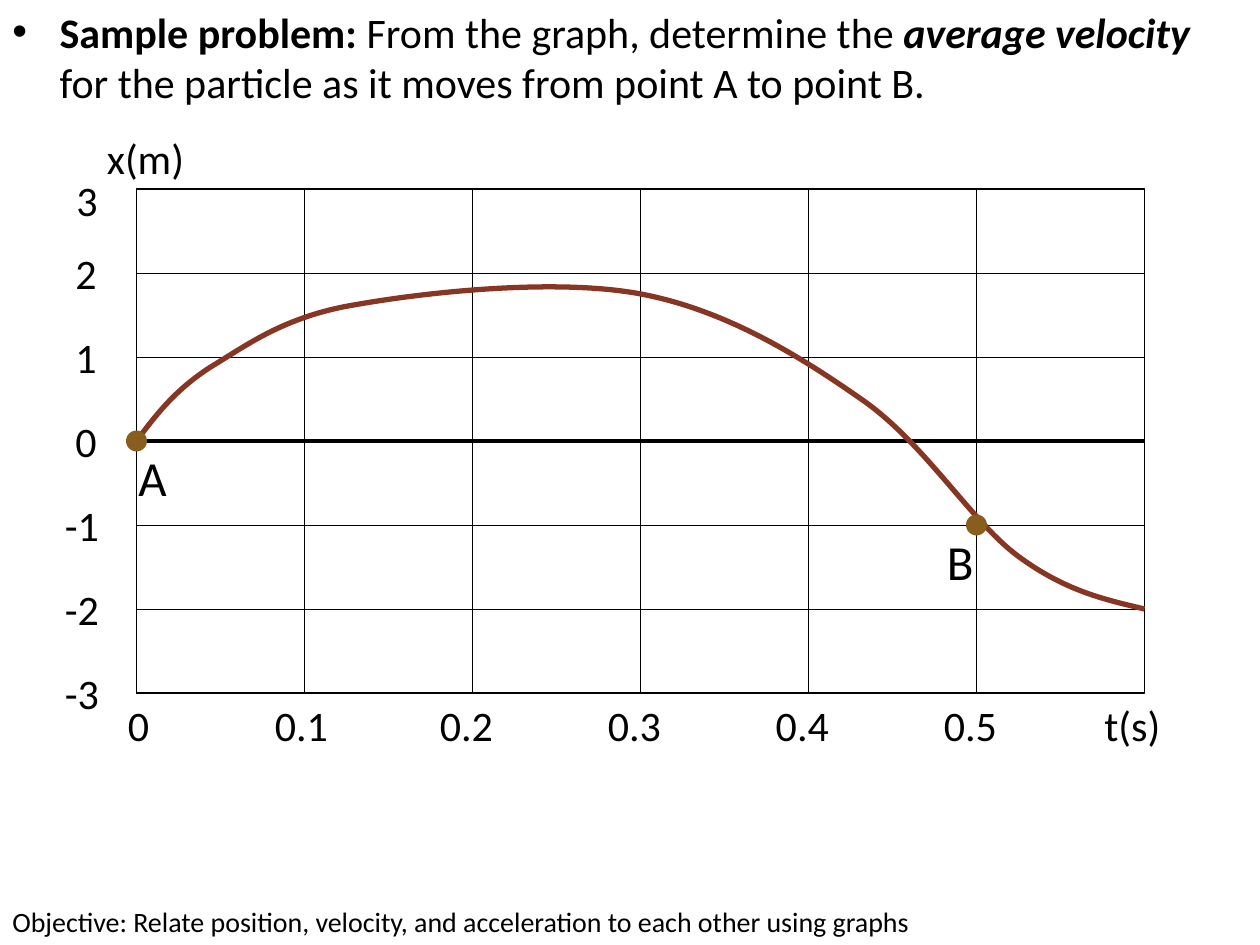
from dataclasses import dataclass
from lxml.etree import SubElement
from pptx import Presentation
from pptx.dml.color import RGBColor
from pptx.enum.shapes import MSO_CONNECTOR, MSO_SHAPE
from pptx.enum.text import MSO_ANCHOR, MSO_AUTO_SIZE
from pptx.oxml.ns import qn
from pptx.util import Pt

EMU_PER_PX = 7620
SLIDE_WIDTH, SLIDE_HEIGHT = 1200, 900
LEFT, TOP, STEP_X, STEP_Y, COLUMNS, ROWS = 130, 180, 160, 80, 6, 6
RIGHT, BOTTOM = LEFT + COLUMNS * STEP_X, TOP + ROWS * STEP_Y
AXIS_Y = TOP + 3 * STEP_Y


@dataclass(frozen=True)
class Theme:
    font: str = "Calibri"
    ink: str = "000000"
    paper: str = "FFFFFF"
    curve: str = "873624"
    point: str = "895D1D"
    body: int = 24
    name: int = 28
    footer: int = 16
    hairline: float = 0.5
    thin: float = 0.75
    axis: float = 2.25
    bold_curve: float = 3


def px(value):
    return round(value * EMU_PER_PX)


class SlidePainter:
    def __init__(self, slide, theme):
        self.slide = slide
        self.theme = theme

    def paint_line(self, line, color, width):
        line.color.rgb = RGBColor.from_string(color)
        line.width = Pt(width)

    def text(self, left, top, width, height, runs, size, wrap=True,
             anchor=MSO_ANCHOR.TOP, grow=True):
        box = self.slide.shapes.add_textbox(*map(px, (left, top, width, height)))
        frame = box.text_frame
        frame.word_wrap = wrap
        frame.vertical_anchor = anchor
        frame.auto_size = MSO_AUTO_SIZE.SHAPE_TO_FIT_TEXT if grow else MSO_AUTO_SIZE.NONE
        para = frame.paragraphs[0]
        for words, bold, italic in runs:
            span = para.add_run()
            span.text = words
            span.font.name = self.theme.font
            span.font.size = Pt(size)
            span.font.bold = bold
            span.font.italic = italic
            span.font.color.rgb = RGBColor.from_string(self.theme.ink)
        return para

    def bullet(self, left, top, width, height, runs, size, indent):
        para = self.text(left, top, width, height, runs, size, grow=False)
        properties = para._p.get_or_add_pPr()
        properties.set("marL", str(px(indent)))
        properties.set("indent", str(-px(indent)))
        SubElement(properties, qn("a:buFont")).set("typeface", "Arial")
        SubElement(properties, qn("a:buChar")).set("char", "•")

    def label(self, left, top, width, height, words, size):
        self.text(left, top, width, height, [(words, False, False)], size,
                  wrap=False, anchor=MSO_ANCHOR.BOTTOM)

    def shape(self, kind, left, top, width, height, fill, outline=None):
        shape = self.slide.shapes.add_shape(kind, *map(px, (left, top, width, height)))
        shape.shadow.inherit = False
        shape.fill.solid()
        shape.fill.fore_color.rgb = RGBColor.from_string(fill)
        if outline:
            self.paint_line(shape.line, outline, self.theme.thin)
        else:
            shape.line.fill.background()
        return shape

    def line(self, x1, y1, x2, y2, width):
        line = self.slide.shapes.add_connector(
            MSO_CONNECTOR.STRAIGHT, *map(px, (x1, y1, x2, y2)))
        self.paint_line(line.line, self.theme.ink, width)
        SubElement(line._element.spPr, qn("a:effectLst"))
        return line

    def curve(self, start, points, color, width):
        builder = self.slide.shapes.build_freeform(*start, scale=EMU_PER_PX)
        builder.add_line_segments(points, close=False)
        shape = builder.convert_to_shape()
        segments = list(shape._element.iter(qn("a:lnTo")))
        for first in range(0, len(segments), 3):
            bend, *others = segments[first:first + 3]
            for other in others:
                bend.append(other[0])
                other.getparent().remove(other)
            bend.tag = qn("a:cubicBezTo")
        shape.shadow.inherit = False
        shape.fill.background()
        self.paint_line(shape.line, color, width)

    def dot(self, x, y, radius=10):
        self.shape(MSO_SHAPE.OVAL, x - radius, y - radius, 2 * radius, 2 * radius,
                   self.theme.point)


def draw_grid(painter):
    theme = painter.theme
    plot = painter.shape(MSO_SHAPE.RECTANGLE, LEFT, TOP, RIGHT - LEFT, BOTTOM - TOP,
                         theme.paper, theme.ink)
    for row in range(ROWS + 1):
        y = TOP + row * STEP_Y
        middle = y == AXIS_Y
        line = painter.line(LEFT, y, RIGHT, y, theme.axis if middle else theme.hairline)
        if middle:
            line.begin_connect(plot, 1)
            line.end_connect(plot, 3)
    for column in range(1, COLUMNS + 1):
        x = LEFT + column * STEP_X
        line = painter.line(x, TOP, x, BOTTOM, theme.thin)
        if 2 * column == COLUMNS:
            line.begin_connect(plot, 0)
            line.end_connect(plot, 2)


def draw_labels(painter):
    size = painter.theme.body
    widths = {3: 48, 2: 48, 1: 42, 0: 48, -1: 59, -2: 65, -3: 65}
    for value, width in widths.items():
        left = 50 if value < 0 else 60
        left, offset = (61, 20) if value == 3 else (left, 30)
        painter.label(left, AXIS_Y - value * STEP_Y - offset, width, 60, str(value), size)
    ticks = [("0", 20, 48), ("0.1", 40, 77)]
    ticks += [(f"0.{tenth}", 43, 83) for tenth in range(2, 6)]
    for column, (words, offset, width) in enumerate(ticks):
        painter.label(LEFT + column * STEP_X - offset, BOTTOM, width, 60, words, size)
    painter.label(1040, BOTTOM, 91, 60, "t(s)", size)
    painter.label(90, 120, 108, 60, "x(m)", size)


def draw_motion(painter):
    theme = painter.theme
    start = (LEFT, AXIS_Y)
    points = [
        (148, 396), (166, 372), (200, 350),
        (235, 329), (271, 301), (340, 290),
        (408, 278), (530, 265), (610, 280),
        (690, 295), (760, 338), (820, 380),
        (880, 421), (925, 497), (970, 530),
        (1015, 563), (1052, 571), (RIGHT, 580),
    ]
    painter.curve(start, points, theme.curve, theme.bold_curve)
    painter.dot(*start)
    painter.label(120, 420, 59, 68, "A", theme.name)
    painter.label(890, 500, 54, 68, "B", theme.name)
    painter.dot(LEFT + 5 * STEP_X, AXIS_Y + STEP_Y)


def main():
    deck = Presentation()
    deck.slide_width, deck.slide_height = px(SLIDE_WIDTH), px(SLIDE_HEIGHT)
    page = deck.slides.add_slide(deck.slide_layouts[6])
    theme = Theme()
    painter = SlidePainter(page, theme)
    problem = [
        ("Sample problem:", True, False),
        (" From the graph, determine the ", False, False),
        ("average velocity", True, True),
        (" for the particle as it moves from point A to point B.", False, False),
    ]
    painter.bullet(0, 0, SLIDE_WIDTH, 680, problem, theme.body, 45)
    draw_grid(painter)
    draw_labels(painter)
    draw_motion(painter)
    objective = ("Objective: Relate position, velocity, and acceleration "
                 "to each other using graphs")
    painter.text(0, 856, SLIDE_WIDTH, 44, [(objective, False, False)], theme.footer)
    deck.save("out.pptx")


if __name__ == "__main__":
    main()
